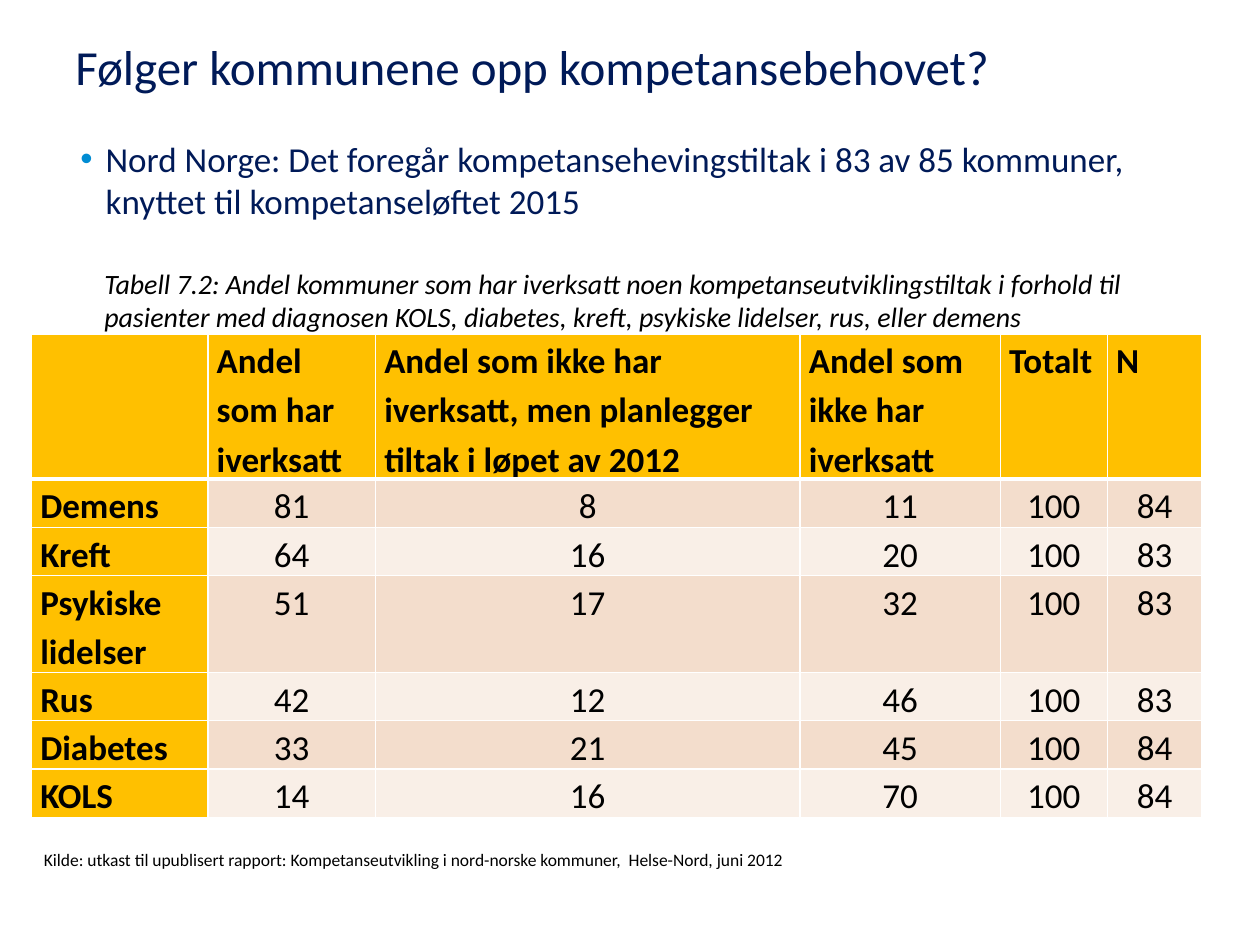
import pptx
import pptx.util
import pptx.dml.color
import pptx.enum.text
import pptx.oxml.ns
import lxml.etree

Inches = pptx.util.Inches
Pt = pptx.util.Pt
ANCHOR = pptx.enum.text.MSO_ANCHOR
ALIGN = pptx.enum.text.PP_ALIGN
qn = pptx.oxml.ns.qn

COLORS = {
    "navy": "001A58",
    "bullet": "008CD3",
    "black": "000000",
    "white": "FFFFFF",
    "gold": "FFC000",
    "dark_band": "F3DDCC",
    "light_band": "F9EFE7",
}


def add_run(p, text, size, color, bold=False, italic=False):
    r = p.add_run()
    r.text = text
    r.font.name = "Calibri"
    r.font.size = Pt(size)
    r.font.bold = bold
    r.font.italic = italic
    r.font.color.rgb = pptx.dml.color.RGBColor.from_string(COLORS[color])


def add_text(s, box, text, size, color, italic=False, anchor=ANCHOR.TOP, inset=0.05):
    sp = s.shapes.add_textbox(*[Inches(v) for v in box])
    tf = sp.text_frame
    tf.word_wrap = True
    tf.vertical_anchor = anchor
    tf.margin_top = tf.margin_bottom = Inches(inset)
    p = tf.paragraphs[0]
    add_run(p, text, size, color, italic=italic)
    return p


prs = pptx.Presentation()
prs.slide_width = Inches(10)
prs.slide_height = Inches(7.5)
s = prs.slides.add_slide(prs.slide_layouts[6])

add_text(s, (0.5, 0.29, 9, 0.65), "Følger kommunene opp kompetansebehovet?", 28, "navy", inset=0)

p = add_text(
    s, (0.54, 1.04, 9, 4.1),
    "Nord Norge: Det foregår kompetansehevingstiltak i 83 av 85 kommuner, "
    "knyttet til kompetanseløftet 2015",
    20, "navy",
)
pPr = p._p.get_or_add_pPr()
pPr.set("marL", str(Inches(0.2)))
pPr.set("indent", str(-Inches(0.2)))
buClr = lxml.etree.SubElement(pPr, qn("a:buClr"))
lxml.etree.SubElement(buClr, qn("a:srgbClr")).set("val", COLORS["bullet"])
lxml.etree.SubElement(pPr, qn("a:buFont")).set("typeface", "Arial")
lxml.etree.SubElement(pPr, qn("a:buChar")).set("char", "•")

rows = [
    ["", "Andel som har iverksatt",
     "Andel som ikke har iverksatt, men planlegger tiltak i løpet av 2012",
     "Andel som ikke har iverksatt", "Totalt", "N"],
    ["Demens", "81", "8", "11", "100", "84"],
    ["Kreft", "64", "16", "20", "100", "83"],
    ["Psykiske lidelser", "51", "17", "32", "100", "83"],
    ["Rus", "42", "12", "46", "100", "83"],
    ["Diabetes", "33", "21", "45", "100", "84"],
    ["KOLS", "14", "16", "70", "100", "84"],
]
col_widths = [1.4, 1.33, 3.37, 1.59, 0.85, 0.75]
row_heights = [0.93, 0.3, 0.3, 0.62, 0.3, 0.3, 0.3]

table = s.shapes.add_table(
    len(rows), len(col_widths), Inches(0.25), Inches(2.65), Inches(9.29), Inches(3.83)
).table
for col, width in zip(table.columns, col_widths):
    col.width = Inches(width)
for row, height in zip(table.rows, row_heights):
    row.height = Inches(height)

for i, row in enumerate(rows):
    for j, text in enumerate(row):
        cell = table.cell(i, j)
        heading = i == 0 or j == 0
        cell.margin_left = cell.margin_right = Inches(0.07)
        cell.margin_top = cell.margin_bottom = 0

        tcPr = cell._tc.get_or_add_tcPr()
        for side in "LRTB":
            thick = (i, side) in ((0, "B"), (1, "T"))
            ln = lxml.etree.SubElement(tcPr, qn("a:ln" + side))
            ln.set("w", str(Pt(3 if thick else 1)))
            fill = lxml.etree.SubElement(ln, qn("a:solidFill"))
            lxml.etree.SubElement(fill, qn("a:srgbClr")).set("val", COLORS["white"])

        band = "gold" if heading else "dark_band" if i % 2 else "light_band"
        cell.fill.solid()
        cell.fill.fore_color.rgb = pptx.dml.color.RGBColor.from_string(COLORS[band])

        if text:
            p = cell.text_frame.paragraphs[0]
            p.line_spacing = 1.15
            p.alignment = ALIGN.LEFT if heading else ALIGN.CENTER
            add_run(p, text, 20, "black", bold=heading)

add_text(
    s, (0.73, 2.06, 8.77, 0.64),
    "Tabell 7.2: Andel kommuner som har iverksatt noen kompetanseutviklingstiltak "
    "i forhold til pasienter med diagnosen KOLS, diabetes, kreft, psykiske lidelser, "
    "rus, eller demens",
    16, "black", italic=True, anchor=ANCHOR.MIDDLE,
)
add_text(
    s, (0.25, 6.69, 9.25, 0.27),
    "Kilde: utkast til upublisert rapport: Kompetanseutvikling i nord-norske kommuner,  "
    "Helse-Nord, juni 2012",
    10, "black",
)

prs.save("out.pptx")
